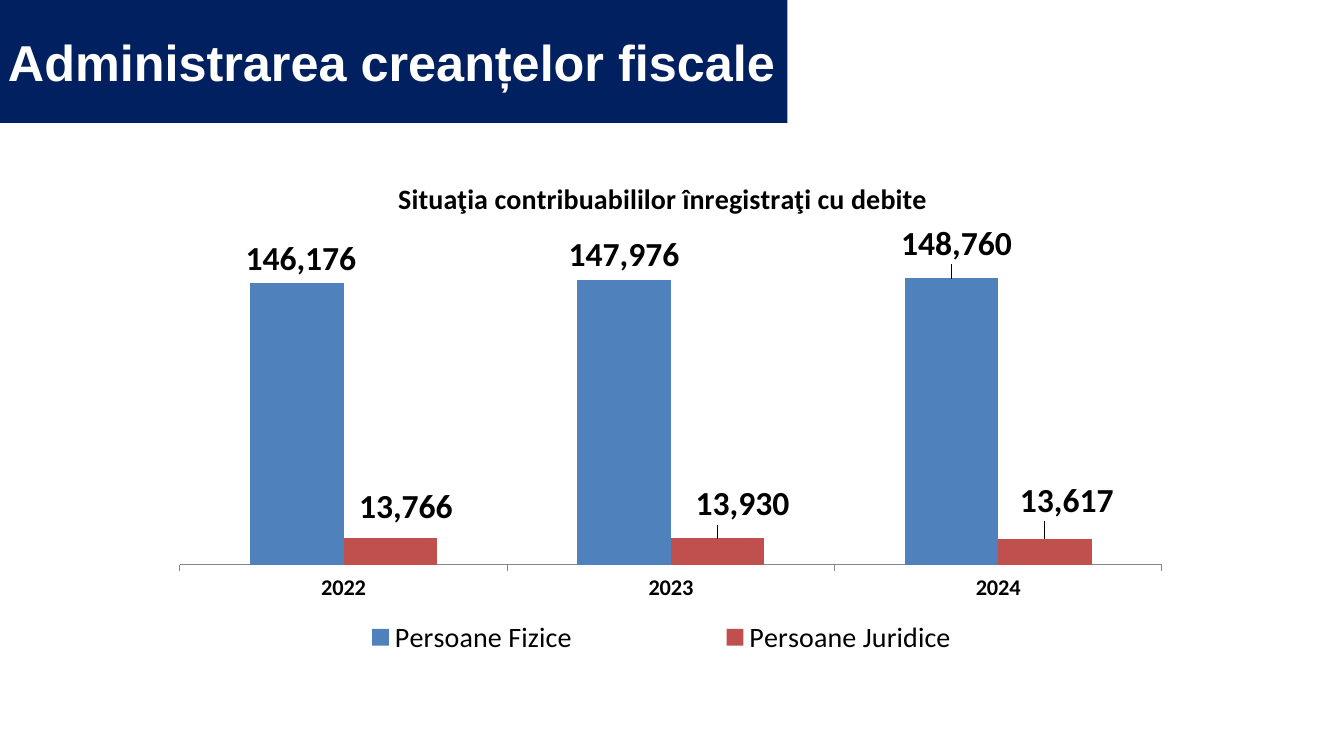
"""Builds the slide on taxpayers registered with debts."""
from lxml import etree
from pptx import Presentation
from pptx import util as u
from pptx.chart import data
from pptx.dml.color import RGBColor
from pptx.enum import chart as ec, shapes, text
from pptx.oxml.ns import qn

HEAD = "Administrarea creanțelor fiscale"
TITLE = "Situaţia contribuabililor înregistraţi cu debite"
YEARS = ["2022", "2023", "2024"]
NAVY = RGBColor(0x00, 0x20, 0x60)
WHITE = RGBColor(0xFF, 0xFF, 0xFF)
BLACK = RGBColor(0, 0, 0)
GREY = RGBColor(0x86, 0x86, 0x86)
BLUE = RGBColor(0x4F, 0x81, 0xBD)
RED = RGBColor(0xC0, 0x50, 0x4D)
SERIES = [
    ("Persoane Fizice", (146176, 147976, 148760), BLUE,
     {0: (0.004, 0), 2: (0.005, -0.019)}),
    ("Persoane Juridice", (13766, 13930, 13617), RED,
     {0: (0.015, -0.013), 1: (0.024, -0.017), 2: (0.021, -0.025)}),
]
BAR = (-1.4, 0, 563.8, 87.8)
AREA = (117.4, 111.6, 743, 374.4)


def style(font, size, bold=False, color=BLACK, face="Calibri"):
    font.size, font.bold, font.name = u.Pt(size), bold, face
    font.color.rgb = color


def write(frame, words, **look):
    para = frame.paragraphs[0]
    para.alignment = look.pop("align", None)
    run = para.add_run()
    run.text = words
    style(run.font, **look)


def place(node, index, **vals):
    for old in node.findall(qn("c:layout")):
        node.remove(old)
    outer = etree.Element(qn("c:layout"))
    inner = etree.SubElement(outer, qn("c:manualLayout"))
    for tag, val in vals.items():
        etree.SubElement(inner, qn("c:" + tag)).set("val", str(val))
    node.insert(index, outer)


def add_head(slide):
    bar = slide.shapes.add_shape(shapes.MSO_SHAPE.RECTANGLE, *map(u.Pt, BAR))
    bar.shadow.inherit = False
    bar.fill.solid()
    bar.fill.fore_color.rgb = NAVY
    bar.line.fill.background()
    bar.text_frame.vertical_anchor = text.MSO_ANCHOR.MIDDLE
    write(bar.text_frame, HEAD, size=36, bold=True, color=WHITE,
          face="Arial", align=text.PP_ALIGN.LEFT)


def add_axes(chart):
    cat, val = chart.category_axis, chart.value_axis
    style(cat.tick_labels.font, 16, True)
    cat.major_tick_mark = ec.XL_TICK_MARK.OUTSIDE
    cat.format.line.color.rgb = GREY
    cat.format.line.width = u.Pt(0.75)
    val.minimum_scale, val.maximum_scale = 0, 160000
    val.major_unit = 20000
    val.has_major_gridlines = False
    val.visible = False


def add_labels(ser, shifts):
    top = ec.XL_LABEL_POSITION.OUTSIDE_END
    tags = ser.data_labels
    tags.show_value = True
    tags.number_format, tags.number_format_is_linked = "#,##0", False
    tags.position = top
    style(tags.font, 24, True)
    for idx in shifts:
        tag = ser.points[idx].data_label
        style(tag.font, 24, True)
        tag.position = top
    nodes = ser.data_labels._element.findall(qn("c:dLbl"))
    for node, (x, y) in zip(nodes, shifts.values()):
        place(node, 1, x=x, y=y)


def add_chart(slide):
    src = data.CategoryChartData(number_format="#,##0")
    src.categories = YEARS
    for name, vals, *_ in SERIES:
        src.add_series(name, vals)
    chart = slide.shapes.add_chart(
        ec.XL_CHART_TYPE.COLUMN_CLUSTERED, *map(u.Pt, AREA), src).chart
    style(chart.font, 10)
    add_axes(chart)
    plot = chart.plots[0]
    plot.gap_width, plot.overlap, plot.vary_by_categories = 150, 0, False
    for ser, (_, _, color, shifts) in zip(plot.series, SERIES):
        ser.format.fill.solid()
        ser.format.fill.fore_color.rgb = color
        ser.invert_if_negative = False
        add_labels(ser, shifts)
    chart.has_title = chart.has_legend = True
    write(chart.chart_title.text_frame, TITLE, size=20, bold=True)
    key = chart.legend
    key.position = ec.XL_LEGEND_POSITION.RIGHT
    key.include_in_layout = False
    style(key.font, 20)
    root = chart.element if hasattr(chart, "element") else chart._chartSpace
    edge = dict(xMode="edge", yMode="edge")
    place(root.find(".//" + qn("c:plotArea")), 0, layoutTarget="inner",
          **edge, x=0.015, y=0.192, w=0.944, h=0.588)
    place(root.find(qn("c:chart")).find(qn("c:title")), 1,
          **edge, x=0.22, y=0.034)
    place(root.find(".//" + qn("c:legend")), 1,
          **edge, x=0.06, y=0.868, w=0.836, h=0.1)


def main():
    deck = Presentation()
    deck.slide_width, deck.slide_height = u.Pt(960), u.Pt(540)
    slide = deck.slides.add_slide(deck.slide_layouts[6])
    add_head(slide)
    add_chart(slide)
    deck.save("out.pptx")


if __name__ == "__main__":
    main()
